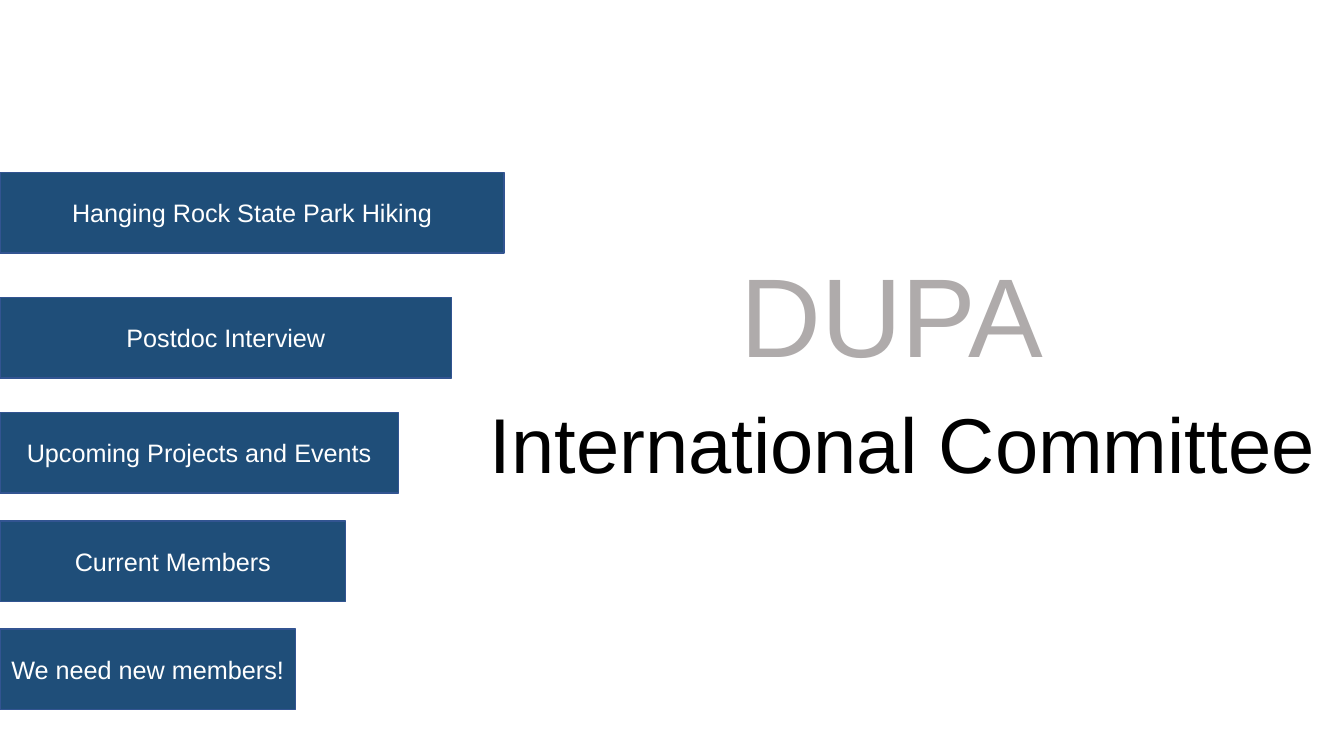
from dataclasses import dataclass

from pptx import Presentation
from pptx.dml.color import RGBColor
from pptx.enum.shapes import MSO_SHAPE
from pptx.enum.text import MSO_ANCHOR, MSO_AUTO_SIZE, PP_ALIGN
from pptx.slide import Slide
from pptx.text.text import TextFrame
from pptx.util import Inches, Pt

RECTANGLE = MSO_SHAPE.RECTANGLE
TOP, MIDDLE, BOTTOM = MSO_ANCHOR.TOP, MSO_ANCHOR.MIDDLE, MSO_ANCHOR.BOTTOM
CENTER = PP_ALIGN.CENTER
NO_AUTOFIT = MSO_AUTO_SIZE.NONE

NAVY = RGBColor(0x1F, 0x4E, 0x79)
EDGE_BLUE = RGBColor(0x32, 0x54, 0x91)
GRAY = RGBColor(0xAF, 0xAB, 0xAB)
BLACK = RGBColor(0x00, 0x00, 0x00)
WHITE = RGBColor(0xFF, 0xFF, 0xFF)

FONT = "Arial"
BAR_HEIGHT = 0.8


@dataclass(frozen=True)
class Heading:
    placeholder: int
    text: str
    left: float
    top: float
    width: float
    height: float
    size: float
    color: RGBColor
    anchor: MSO_ANCHOR


@dataclass(frozen=True)
class TopicBar:
    text: str
    top: float
    width: float


HEADINGS = [
    Heading(0, "DUPA", 6.03, 2.25, 5.63, 1.59, 80, GRAY, BOTTOM),
    Heading(1, "International Committee", 4.57, 3.98, 8.77, 1.21, 55.5, BLACK, TOP),
]

TOPIC_BARS = [
    TopicBar("Hanging Rock State Park Hiking", 1.71, 5.0),
    TopicBar("Postdoc Interview", 2.95, 4.48),
    TopicBar("Upcoming Projects and Events", 4.09, 3.95),
    TopicBar("Current Members", 5.17, 3.43),
    TopicBar("We need new members!", 6.24, 2.93),
]


def write_centered(frame: TextFrame, text: str, size: float, color: RGBColor,
                   anchor: MSO_ANCHOR, line_spacing: float = 1.0) -> None:
    frame.text = text
    frame.word_wrap = True
    frame.auto_size = NO_AUTOFIT
    frame.vertical_anchor = anchor
    paragraph = frame.paragraphs[0]
    paragraph.alignment = CENTER
    paragraph.line_spacing = line_spacing
    paragraph.space_before = Pt(0)
    font = paragraph.runs[0].font
    font.name = FONT
    font.size = Pt(size)
    font.color.rgb = color


def fill_heading(slide: Slide, heading: Heading) -> None:
    holder = slide.placeholders[heading.placeholder]
    holder.left, holder.top = Inches(heading.left), Inches(heading.top)
    holder.width, holder.height = Inches(heading.width), Inches(heading.height)
    write_centered(holder.text_frame, heading.text, heading.size,
                   heading.color, heading.anchor, line_spacing=0.9)


def draw_topic_bar(slide: Slide, topic: TopicBar) -> None:
    bar = slide.shapes.add_shape(RECTANGLE, Inches(0), Inches(topic.top),
                                 Inches(topic.width), Inches(BAR_HEIGHT))
    bar.shadow.inherit = False
    bar.fill.solid()
    bar.fill.fore_color.rgb = NAVY
    bar.line.color.rgb = EDGE_BLUE
    bar.line.width = Pt(1)
    write_centered(bar.text_frame, topic.text, 18, WHITE, MIDDLE)


def main() -> None:
    presentation = Presentation()
    presentation.slide_width = Inches(13.33)
    presentation.slide_height = Inches(7.5)
    slide = presentation.slides.add_slide(presentation.slide_layouts[0])

    # Title and subtitle on the right
    for heading in HEADINGS:
        fill_heading(slide, heading)

    # Topic bars along the left edge
    for topic in TOPIC_BARS:
        draw_topic_bar(slide, topic)

    presentation.save("out.pptx")


if __name__ == "__main__":
    main()
